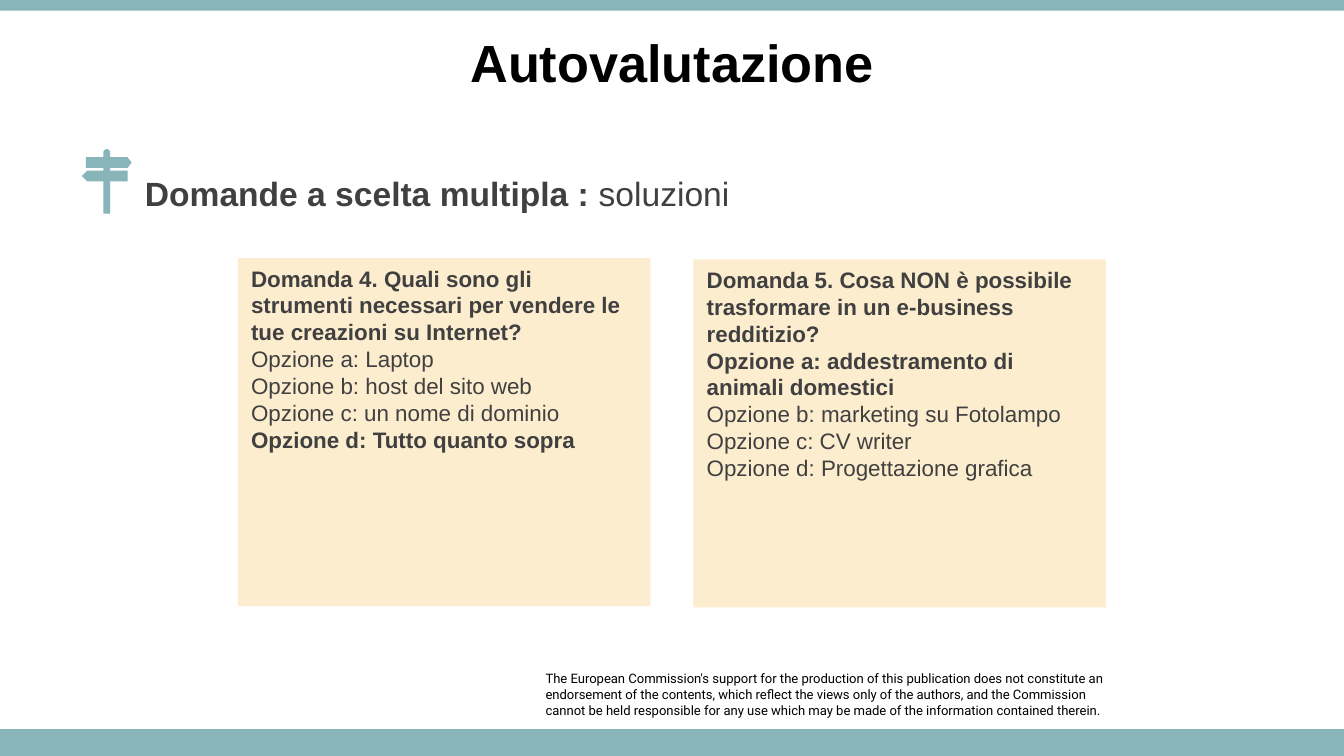
from dataclasses import dataclass
from math import cos, pi, sin

from pptx import Presentation
from pptx.dml.color import RGBColor
from pptx.enum import shapes, text
from pptx.util import Inches, Pt


@dataclass(frozen=True)
class Theme:
    teal: RGBColor = RGBColor(0x87, 0xB5, 0xBA)
    cream: RGBColor = RGBColor(0xFC, 0xED, 0xCF)
    ink: RGBColor = RGBColor(0x40, 0x40, 0x40)
    black: RGBColor = RGBColor(0, 0, 0)
    font: str = "Arial"
    small: str = "Roboto"
    title: int = 28
    head: int = 18
    body: int = 12
    note: int = 7


THEME = Theme()
WIDTH = 10
HEIGHT = WIDTH * 9 / 16

# Each line of a card: its words, and whether they are bold.
CARDS = [
    [("Domanda 4. Quali sono gli strumenti necessari per vendere le "
      "tue creazioni su Internet?", True),
     ("Opzione a: Laptop", False),
     ("Opzione b: host del sito web", False),
     ("Opzione c: un nome di dominio", False),
     ("Opzione d: Tutto quanto sopra", True)],
    [("Domanda 5. Cosa NON è possibile trasformare in un e-business "
      "redditizio?", True),
     ("Opzione a: addestramento di animali domestici", True),
     ("Opzione b: marketing su Fotolampo", False),
     ("Opzione c: CV writer", False),
     ("Opzione d: Progettazione grafica", False)],
]
NOTE = [
    "The European Commission's support for the production of this publication "
    "does not constitute an endorsement of the contents, which reflect the "
    "views only of the authors, and the Commission",
    "cannot be held responsible for any use which may be made of the "
    "information contained therein.",
]


def paint(shape, color):
    shape.shadow.inherit = False
    shape.fill.solid()
    shape.fill.fore_color.rgb = color
    shape.line.fill.background()


def add_rect(slide, box, color):
    rect = slide.shapes.add_shape(shapes.MSO_SHAPE.RECTANGLE, *map(Inches, box))
    paint(rect, color)
    return rect


def add_text(slide, box, anchor=text.MSO_ANCHOR.MIDDLE):
    frame = slide.shapes.add_textbox(*map(Inches, box)).text_frame
    frame.word_wrap = True
    frame.vertical_anchor = anchor
    return frame


def style(para, size, color, font=THEME.font):
    para.font.size = Pt(size)
    para.font.color.rgb = color
    para.font.name = font


def add_run(para, words, bold):
    run = para.add_run()
    run.text = words
    run.font.bold = bold


def add_title(slide, box):
    para = add_text(slide, box).paragraphs[0]
    para.text = "Autovalutazione"
    para.alignment = text.PP_ALIGN.CENTER
    para.font.bold = True
    style(para, THEME.title, THEME.black)


def add_head(slide, box):
    para = add_text(slide, box).paragraphs[0]
    add_run(para, "Domande a scelta multipla : ", True)
    add_run(para, "soluzioni", False)
    style(para, THEME.head, THEME.ink)


def add_sign(slide, box):
    """Draw a signpost with a rounded top and two arrow boards."""
    left, top, width, height = box
    mid, half, tip = width / 2, 0.025, 0.03
    cap = [(mid - half * cos(pi * i / 12), half - half * sin(pi * i / 12))
           for i in range(13)]
    right = [(mid + half, 0.06), (width - tip, 0.06), (width, 0.10),
             (width - tip, 0.14), (mid + half, 0.14), (mid + half, 0.16),
             (width - tip, 0.16), (width - tip, 0.24), (mid + half, 0.24),
             (mid + half, height)]
    back = [(mid - half, height), (mid - half, 0.24), (tip + 0.01, 0.24),
            (0, 0.20), (tip + 0.01, 0.16), (mid - half, 0.16),
            (mid - half, 0.14), (tip, 0.14), (tip, 0.06), (mid - half, 0.06)]
    points = [(Inches(left + x), Inches(top + y)) for x, y in cap + right + back]
    pen = slide.shapes.build_freeform(*points[0])
    pen.add_line_segments(points[1:], close=True)
    paint(pen.convert_to_shape(), THEME.teal)


def add_card(slide, box, lines):
    frame = add_rect(slide, box, THEME.cream).text_frame
    frame.word_wrap = True
    frame.vertical_anchor = text.MSO_ANCHOR.TOP
    para = frame.paragraphs[0]
    para.alignment = text.PP_ALIGN.LEFT
    for i, (words, bold) in enumerate(lines):
        if i:
            para.add_line_break()
        add_run(para, words, bold)
    style(para, THEME.body, THEME.ink)


def add_note(slide, box):
    frame = add_text(slide, box, text.MSO_ANCHOR.TOP)
    frame.margin_left = frame.margin_right = 0
    frame.margin_top = frame.margin_bottom = 0
    frame.text = "\n".join(NOTE)
    for para in frame.paragraphs:
        style(para, THEME.note, THEME.black, THEME.small)


def main():
    deck = Presentation()
    deck.slide_width, deck.slide_height = Inches(WIDTH), Inches(HEIGHT)
    slide = deck.slides.add_slide(deck.slide_layouts[6])
    add_note(slide, (4.06, 4.99, 4.17, 0.35))
    for top, height in ((HEIGHT - 0.2, 0.2), (0, 0.08)):
        add_rect(slide, (0, top, WIDTH, height), THEME.teal)
    add_title(slide, (0, 0.14, WIDTH, 0.63))
    add_head(slide, (0.98, 1.28, 6.69, 0.31))
    add_sign(slide, (0.61, 1.11, 0.37, 0.48))
    for i, lines in enumerate(CARDS):
        add_card(slide, (1.77 + 3.39 * i, 1.92 + 0.01 * i, 3.07, 2.59), lines)
    deck.save("out.pptx")


if __name__ == "__main__":
    main()
